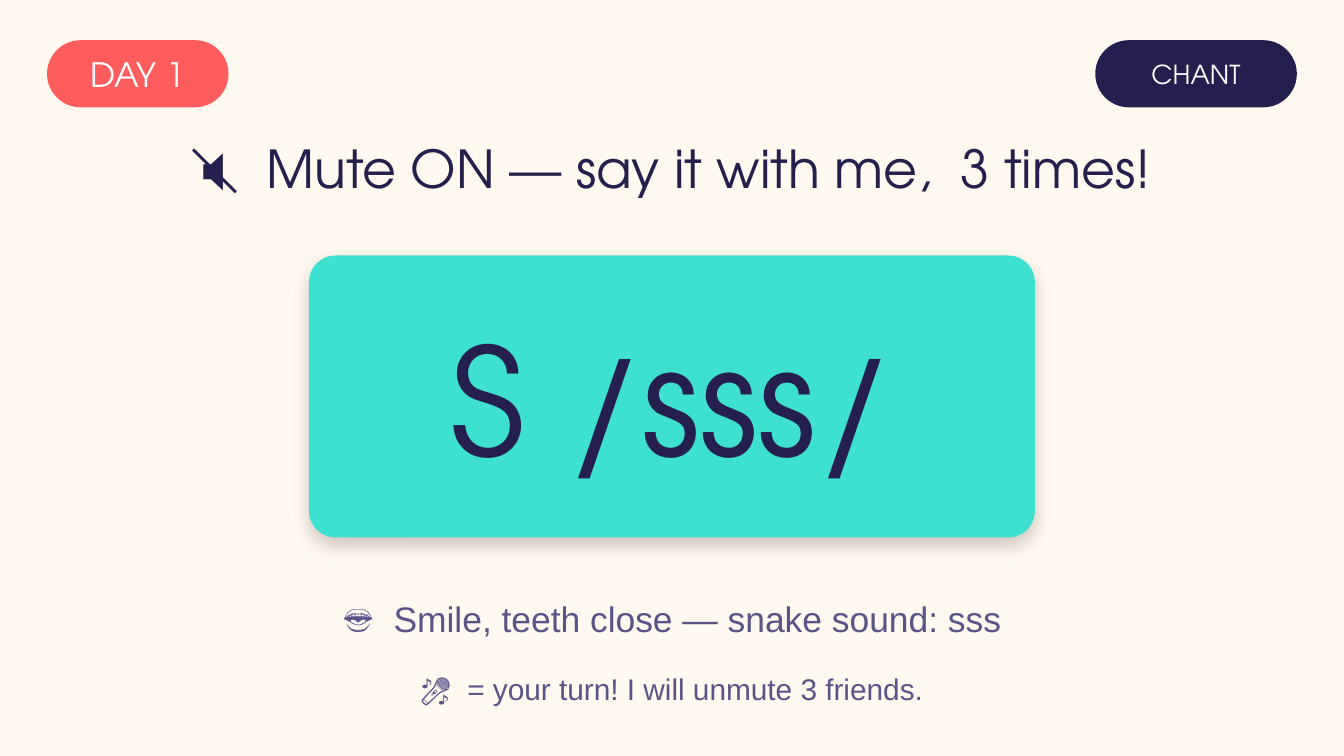
from dataclasses import dataclass

from lxml.etree import SubElement
from pptx import Presentation
from pptx.dml.color import RGBColor
from pptx.enum.shapes import MSO_SHAPE
from pptx.enum.text import MSO_ANCHOR, PP_ALIGN
from pptx.oxml.ns import qn
from pptx.shapes.autoshape import Shape
from pptx.slide import Slide
from pptx.util import Cm, Pt


@dataclass(frozen=True)
class Theme:
    cream: str = "FFF9EF"
    coral: str = "FF5D5D"
    navy: str = "241F4E"
    teal: str = "3EE0CF"
    violet: str = "5A548A"
    white: str = "FFFFFF"
    black: str = "000000"
    title: str = "TeX Gyre Adventor"
    body: str = "Arial"
    day: int = 18
    tag: int = 14
    head: int = 28
    sound: int = 80
    hint: int = 19
    turn: int = 16


@dataclass(frozen=True)
class Label:
    text: str
    size: int
    color: str
    font: str


@dataclass(frozen=True)
class Panel:
    left: float
    top: float
    width: float
    height: float
    round: float
    fill: str
    label: Label


@dataclass(frozen=True)
class Line:
    top: float
    height: float
    label: Label


THEME = Theme()
WIDTH, HEIGHT = 25.4, 14.29
MARGIN, PILL_TOP, PILL_HIGH = 0.89, 0.76, 1.27
TAG_WIDE, CARD_WIDE = 3.81, 13.72

PILLS = [
    Panel(MARGIN, PILL_TOP, 3.43, PILL_HIGH, 0.5, THEME.coral,
          Label("DAY 1", THEME.day, THEME.white, THEME.title)),
    Panel(WIDTH - MARGIN - TAG_WIDE, PILL_TOP, TAG_WIDE, PILL_HIGH, 0.5, THEME.navy,
          Label("CHANT", THEME.tag, THEME.white, THEME.title)),
]
CARD = Panel((WIDTH - CARD_WIDE) / 2, 4.83, CARD_WIDE, 5.33, 0.095, THEME.teal,
             Label("S /sss/", THEME.sound, THEME.navy, THEME.title))
LINES = [
    Line(2.41, 1.52, Label("🔇  Mute ON — say it with me,  3 times!",
                           THEME.head, THEME.navy, THEME.title)),
    Line(11.05, 1.27, Label("👄  Smile, teeth close — snake sound: sss",
                            THEME.hint, THEME.violet, THEME.body)),
    Line(12.45, 1.14, Label("🎤  = your turn! I will unmute 3 friends.",
                            THEME.turn, THEME.violet, THEME.body)),
]


def write(shape: Shape, label: Label) -> None:
    frame = shape.text_frame
    frame.text = label.text
    frame.word_wrap = True
    frame.vertical_anchor = MSO_ANCHOR.MIDDLE
    frame.margin_left = frame.margin_right = 0
    frame.margin_top = frame.margin_bottom = 0
    para = frame.paragraphs[0]
    para.alignment = PP_ALIGN.CENTER
    font = para.runs[0].font
    font.name = label.font
    font.size = Pt(label.size)
    font.color.rgb = RGBColor.from_string(label.color)


def draw_panel(slide: Slide, panel: Panel) -> Shape:
    shape = slide.shapes.add_shape(
        MSO_SHAPE.ROUNDED_RECTANGLE,
        Cm(panel.left), Cm(panel.top), Cm(panel.width), Cm(panel.height))
    shape.adjustments[0] = panel.round
    shape.shadow.inherit = False
    shape.fill.solid()
    shape.fill.fore_color.rgb = RGBColor.from_string(panel.fill)
    shape.line.fill.background()
    write(shape, panel.label)
    return shape


def draw_line(slide: Slide, line: Line) -> None:
    box = slide.shapes.add_textbox(0, Cm(line.top), Cm(WIDTH), Cm(line.height))
    write(box, line.label)


def cast_shade(shape: Shape) -> None:
    effects = shape.element.spPr.find(qn("a:effectLst"))
    shade = SubElement(effects, qn("a:outerShdw"), blurRad=str(Pt(10)),
                       dist=str(Pt(4)), dir="5400000", rotWithShape="0")
    color = SubElement(shade, qn("a:srgbClr"), val=THEME.black)
    SubElement(color, qn("a:alpha"), val="20000")


def main() -> None:
    deck = Presentation()
    deck.slide_width, deck.slide_height = Cm(WIDTH), Cm(HEIGHT)
    slide = deck.slides.add_slide(deck.slide_layouts[6])
    back = slide.background.fill
    back.solid()
    back.fore_color.rgb = RGBColor.from_string(THEME.cream)
    for pill in PILLS:
        draw_panel(slide, pill)
    cast_shade(draw_panel(slide, CARD))
    for line in LINES:
        draw_line(slide, line)
    deck.save("out.pptx")


if __name__ == "__main__":
    main()
